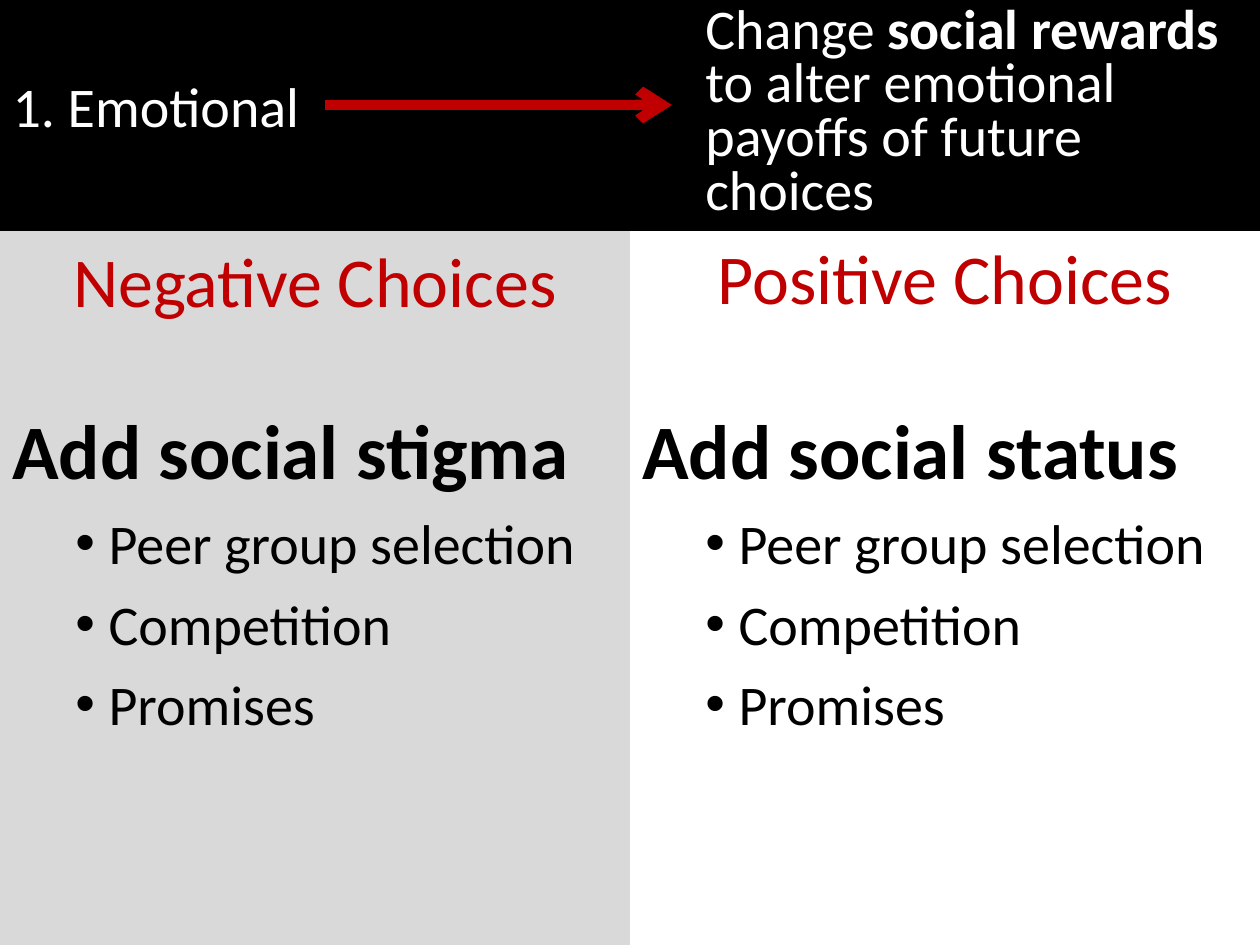
from dataclasses import dataclass
from lxml.etree import SubElement
from pptx import Presentation
from pptx.dml.color import RGBColor
from pptx.enum.shapes import MSO_CONNECTOR, MSO_SHAPE
from pptx.enum.text import MSO_ANCHOR, MSO_AUTO_SIZE, PP_ALIGN
from pptx.oxml.ns import qn
from pptx.util import Pt


@dataclass(frozen=True)
class Theme:
    """Colours, font and type sizes of the slide."""
    font: str = "Calibri"
    black: str = "000000"
    white: str = "FFFFFF"
    grey: str = "D9D9D9"
    red: str = "C00000"
    body: int = 32
    heading: int = 40
    lead: int = 44


def write(p, text, font, size, color, bold=False, align=PP_ALIGN.LEFT, spacing=None, before=0):
    """Add a formatted run to a paragraph."""
    p.alignment, p.line_spacing, p.space_before = align, spacing, Pt(before)
    r = p.add_run()
    r.text = text
    r.font.name, r.font.size, r.font.bold = font, Pt(size), bold
    r.font.color.rgb = RGBColor.from_string(color)


class Builder:
    """Holds the theme and the current slide."""

    def __init__(self, prs, theme):
        """Start a title-only slide."""
        self.t = theme
        self.s = prs.slides.add_slide(prs.slide_layouts[5])

    def panel(self, x, y, w, h, color):
        """Draw a plain filled rectangle."""
        sp = self.s.shapes.add_shape(MSO_SHAPE.RECTANGLE, Pt(x), Pt(y), Pt(w), Pt(h))
        sp.shadow.inherit = False
        sp.fill.solid()
        sp.fill.fore_color.rgb = RGBColor.from_string(color)
        sp.line.fill.background()

    def title(self, text, x, y, w, h):
        """Place the title in front of the panels."""
        sp = self.s.shapes.title
        sp.left, sp.top, sp.width, sp.height = Pt(x), Pt(y), Pt(w), Pt(h)
        sp.element.getparent().append(sp.element)
        tf = sp.text_frame
        tf.auto_size, tf.vertical_anchor = MSO_AUTO_SIZE.NONE, MSO_ANCHOR.MIDDLE
        write(tf.paragraphs[0], text, self.t.font, self.t.body, self.t.white)

    def box(self, x, y, w, h):
        """Add a wrapping text box and return its frame."""
        tf = self.s.shapes.add_textbox(Pt(x), Pt(y), Pt(w), Pt(h)).text_frame
        tf.word_wrap = True
        return tf

    def summary(self, parts, x, y, w, h):
        """Write tight text from (text, bold) parts."""
        p = self.box(x, y, w, h).paragraphs[0]
        for text, bold in parts:
            write(p, text, self.t.font, self.t.body, self.t.white, bold=bold, spacing=0.8, before=6.4)

    def heading(self, text, x, y, w, h):
        """Write a centred column heading."""
        p = self.box(x, y, w, h).paragraphs[0]
        write(p, text, self.t.font, self.t.heading, self.t.red, align=PP_ALIGN.CENTER)

    def points(self, lead, items, x, y, w, h):
        """Write a bold lead line followed by bullets."""
        tf = self.box(x, y, w, h)
        write(tf.paragraphs[0], lead, self.t.font, self.t.lead, self.t.black, bold=True, spacing=1.2)
        for item in items:
            p = tf.add_paragraph()
            p.level = 1
            write(p, item, self.t.font, self.t.body, self.t.black, spacing=1.2)
            pPr = p._p.get_or_add_pPr()
            pPr.set("marL", str(Pt(55)))
            pPr.set("indent", str(Pt(-19)))
            SubElement(pPr, qn("a:buFont"), typeface="Arial")
            SubElement(pPr, qn("a:buChar"), char="•")

    def arrow(self, x1, y1, x2, y2, width):
        """Draw a straight line with an open arrowhead."""
        c = self.s.shapes.add_connector(MSO_CONNECTOR.STRAIGHT, Pt(x1), Pt(y1), Pt(x2), Pt(y2))
        c.line.width = Pt(width)
        c.line.color.rgb = RGBColor.from_string(self.t.red)
        SubElement(c.line._get_or_add_ln(), qn("a:tailEnd"), type="arrow")
        SubElement(c.element.spPr, qn("a:effectLst"))


def main():
    """Build and save the slide."""
    prs = Presentation()
    prs.slide_width, prs.slide_height = Pt(720), Pt(540)
    half, band = 360, 132
    theme = Theme()
    b = Builder(prs, theme)
    b.panel(0, band, half, 540 - band, theme.grey)
    b.panel(0, 0, 720, band, theme.black)
    b.title("1. Emotional", 0, 0, 186, 120)
    b.summary([("Change ", False), ("social rewards ", True),
               ("to alter emotional payoffs of future choices", False)], 396, 0, 324, band)
    b.arrow(186, 60, 384, 60, 6)
    items = ["Peer group selection", "Competition", "Promises"]
    columns = [("Negative Choices", "Add social stigma", band),
               ("Positive Choices", "Add social status", band - 1.5)]
    for i, (heading, lead, top) in enumerate(columns):
        b.points(lead, items, i * half, 216, half, 237)
        b.heading(heading, i * half + 18, top, half - 36, 55.5)
    prs.save("out.pptx")


if __name__ == "__main__":
    main()
